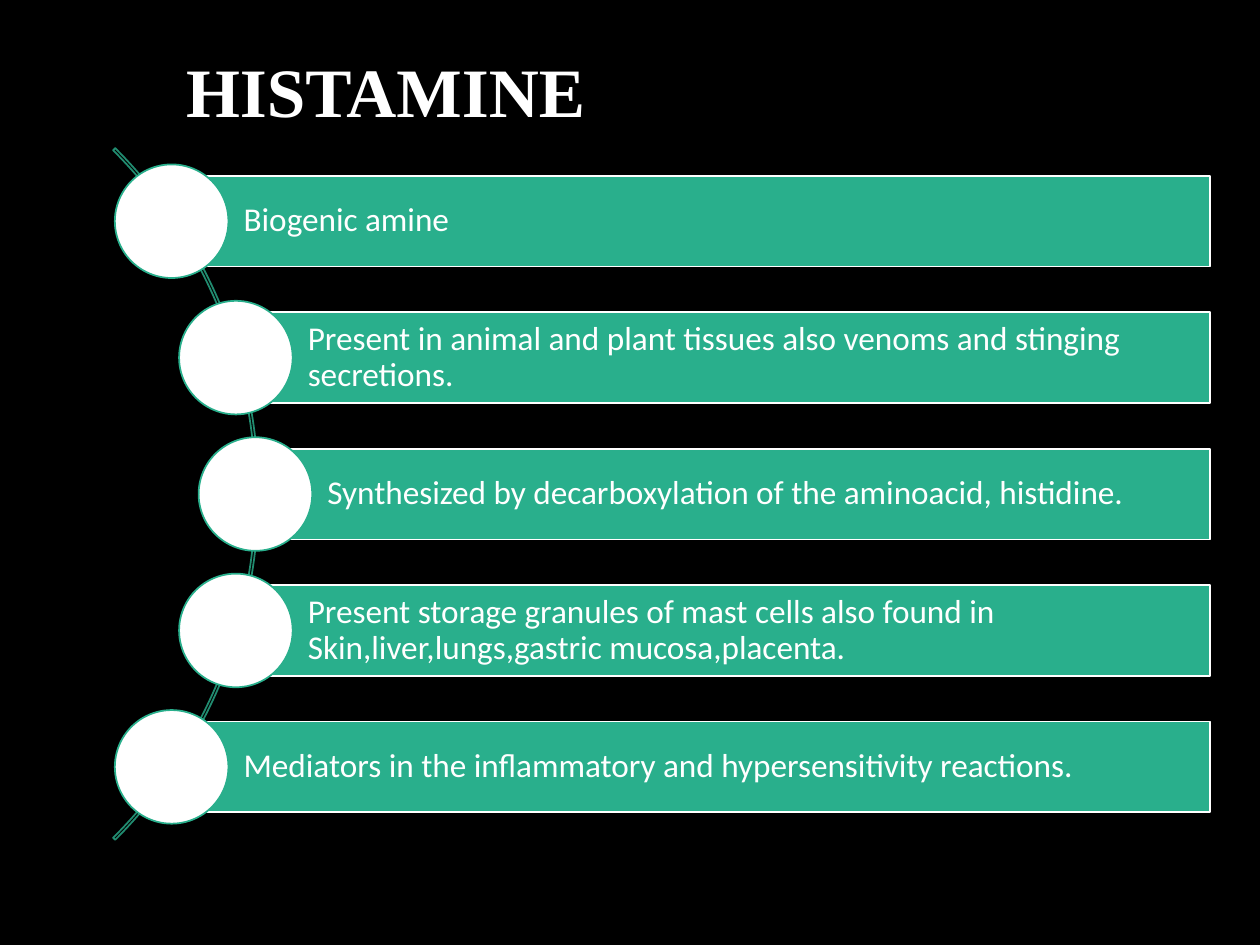
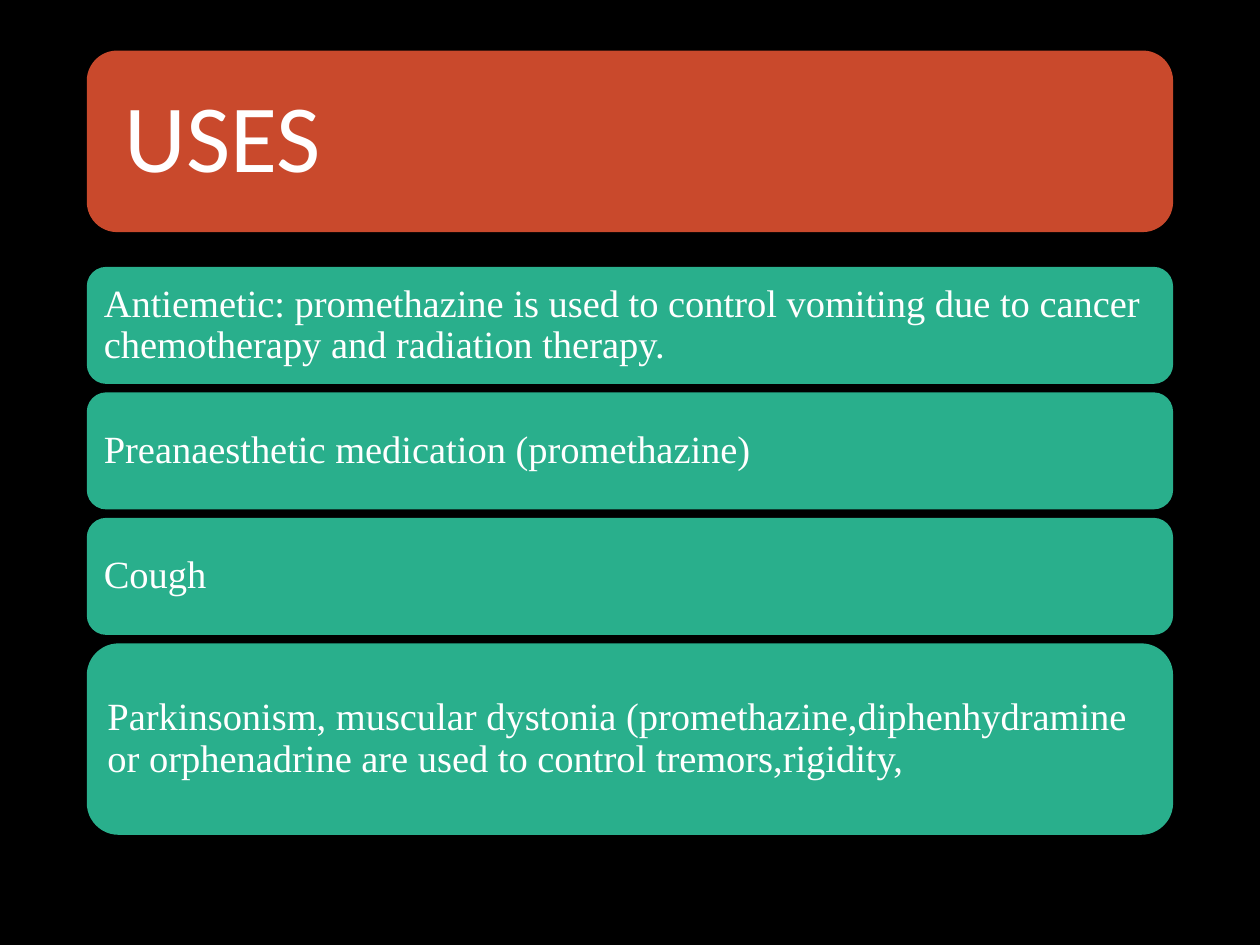
import math

from pptx import Presentation
from pptx.dml.color import RGBColor
from pptx.enum import shapes, text
from pptx.util import Cm, Pt

BLACK = RGBColor(0x00, 0x00, 0x00)
WHITE = RGBColor(0xFF, 0xFF, 0xFF)
GREEN = RGBColor(0x29, 0xAF, 0x8C)
DARK_GREEN = RGBColor(0x21, 0x8C, 0x70)
RED = RGBColor(0xC9, 0x49, 0x2C)
SANS, SERIF = "Calibri", "Times New Roman"

HISTAMINE_FACTS = [
    "Biogenic amine",
    "Present in animal and plant tissues also venoms and stinging secretions.",
    "Synthesized by decarboxylation of the aminoacid, histidine.",
    "Present storage granules of mast cells also found in Skin,liver,lungs,gastric mucosa,placenta.",
    "Mediators in the inflammatory and hypersensitivity reactions.",
]
# Each use with the height of its card in cm
USES = [
    ("Antiemetic: promethazine is used to control vomiting due to cancer "
     "chemotherapy and radiation therapy.", 2.36),
    ("Preanaesthetic medication (promethazine)", 2.36),
    ("Cough", 2.36),
    ("Parkinsonism, muscular dystonia (promethazine,diphenhydramine or "
     "orphenadrine are used to control tremors,rigidity,", 3.86),
]

# Lengths in cm
CURVE_X, CURVE_Y, CURVE_RADIUS = -4.65, 9.96, 9.86
ORBIT_RADIUS = 9.8
FACT_PITCH, BAR_HEIGHT, BAR_RIGHT, DISC = 2.75, 1.83, 24.4, 2.29
CARD_LEFT, CARD_WIDTH, CARD_GAP = 1.75, 21.9, 0.17
BANNER_TOP, BANNER_HEIGHT, FIRST_CARD_TOP = 1.02, 3.66, 5.38


def write(shape, words, font, size, margin, left_margin=None, bold=False):
    frame = shape.text_frame
    frame.word_wrap = True
    frame.auto_size = text.MSO_AUTO_SIZE.NONE
    frame.vertical_anchor = text.MSO_ANCHOR.MIDDLE
    frame.margin_top = frame.margin_right = frame.margin_bottom = Cm(margin)
    frame.margin_left = Cm(margin if left_margin is None else left_margin)
    paragraph = frame.paragraphs[0]
    paragraph.alignment = text.PP_ALIGN.LEFT
    paragraph.line_spacing = 0.9
    run = paragraph.add_run()
    run.text = words
    run.font.name, run.font.size, run.font.bold = font, Pt(size), bold
    run.font.color.rgb = WHITE


def add_figure(slide, kind, box, fill=None, line=None):
    """Add a preset shape; box is left, top, width, height in cm."""
    figure = slide.shapes.add_shape(kind, *map(Cm, box))
    figure.shadow.inherit = False
    if fill is None:
        figure.fill.background()
    else:
        figure.fill.solid()
        figure.fill.fore_color.rgb = fill
    if line is None:
        figure.line.fill.background()
    else:
        figure.line.color.rgb = line
        figure.line.width = Pt(1)
    return figure


def place_title(slide, words, box, font, size, margin, bold=False):
    title = slide.shapes.title
    title.left, title.top, title.width, title.height = map(Cm, box)
    write(title, words, font, size, margin, bold=bold)
    return title


def build_histamine(slide):
    place_title(slide, "HISTAMINE", (3.5, 1.17, 19.9, 1.5), SERIF, 39.6, 0.25, bold=True)
    curve = add_figure(
        slide, shapes.MSO_SHAPE.BLOCK_ARC,
        (CURVE_X - CURVE_RADIUS, CURVE_Y - CURVE_RADIUS, 2 * CURVE_RADIUS, 2 * CURVE_RADIUS),
        line=DARK_GREEN)
    for index, value in enumerate((189, 27, 0.003)):
        curve.adjustments[index] = value

    middle = (len(HISTAMINE_FACTS) - 1) / 2
    for index, fact in enumerate(HISTAMINE_FACTS):
        drop = (index - middle) * FACT_PITCH
        x = CURVE_X + math.sqrt(ORBIT_RADIUS ** 2 - drop ** 2)
        y = CURVE_Y + drop
        bar = add_figure(slide, shapes.MSO_SHAPE.RECTANGLE,
                         (x, y - BAR_HEIGHT / 2, BAR_RIGHT - x, BAR_HEIGHT), GREEN, WHITE)
        write(bar, fact, SANS, 19, 0.13, left_margin=1.45)
        add_figure(slide, shapes.MSO_SHAPE.OVAL,
                   (x - DISC / 2, y - DISC / 2, DISC, DISC), WHITE, GREEN)


def build_uses(slide):
    banner_box = (CARD_LEFT, BANNER_TOP, CARD_WIDTH, BANNER_HEIGHT)
    title = place_title(slide, "USES", banner_box, SANS, 55, 0.76)
    banner = add_figure(slide, shapes.MSO_SHAPE.ROUNDED_RECTANGLE, banner_box, RED)
    title.element.addprevious(banner.element)  # the banner lies behind its title

    top = FIRST_CARD_TOP
    for use, height in USES:
        card = add_figure(slide, shapes.MSO_SHAPE.ROUNDED_RECTANGLE,
                          (CARD_LEFT, top, CARD_WIDTH, height), GREEN)
        write(card, use, SERIF, 22, 0.23)
        top += height + CARD_GAP


def main():
    deck = Presentation()
    deck.slide_width, deck.slide_height = Cm(25.4), Cm(19.05)
    backdrop = deck.slide_master.background.fill
    backdrop.solid()
    backdrop.fore_color.rgb = BLACK
    title_only = deck.slide_layouts[5]
    for build in (build_histamine, build_uses):
        build(deck.slides.add_slide(title_only))
    deck.save("out.pptx")


if __name__ == "__main__":
    main()
